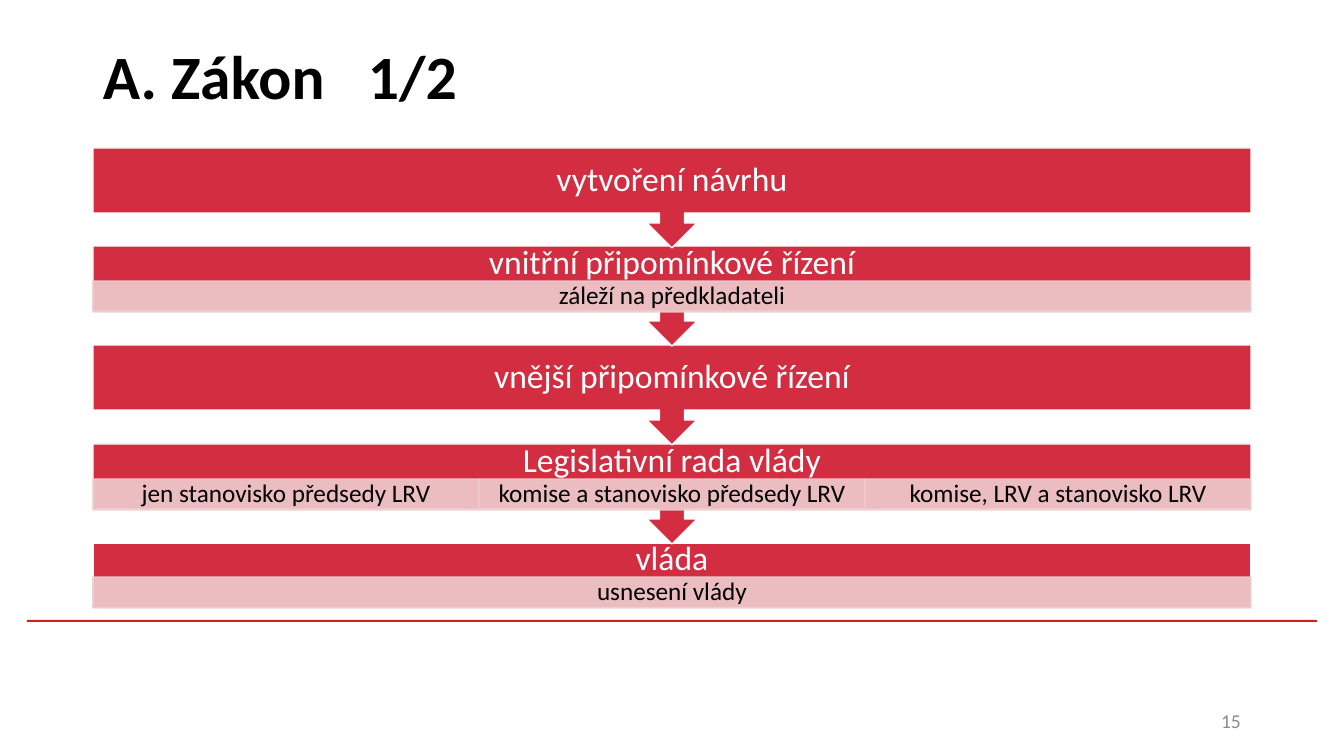
"""Build the slide on the stages of drafting a Czech law."""
from lxml import etree
from pptx import Presentation
from pptx.dml.color import RGBColor
from pptx.enum.shapes import MSO_SHAPE
from pptx.enum.text import MSO_ANCHOR, PP_ALIGN
from pptx.oxml.ns import qn
from pptx.util import Pt

RECTANGLE = MSO_SHAPE.RECTANGLE
ARROW_CALLOUT = MSO_SHAPE.UP_ARROW_CALLOUT
MIDDLE = MSO_ANCHOR.MIDDLE
LEFT, CENTER, RIGHT = PP_ALIGN.LEFT, PP_ALIGN.CENTER, PP_ALIGN.RIGHT

THEME = {
    "font": "Calibri",
    "title_size": 44, "heading_size": 24, "detail_size": 18, "number_size": 14,
    "step": "D22D40", "detail": "EECDCF", "rule": "CD1F21",
    "white": "FFFFFF", "black": "000000", "grey": "8C8C8C",
}
SLIDE_WIDTH, SLIDE_HEIGHT = 1344, 756
SCALE = 12192000 / SLIDE_WIDTH


def px(*lengths):
    return [round(length * SCALE) for length in lengths]


def write(frame, text, size, color, align=CENTER, bold=False, inset=(10, 5), spacing=1.0, tab=None):
    frame.word_wrap = True
    frame.vertical_anchor = MIDDLE
    frame.margin_left, frame.margin_top = px(*inset)
    frame.margin_right, frame.margin_bottom = px(*inset)
    paragraph = frame.paragraphs[0]
    paragraph.alignment = align
    paragraph.line_spacing = spacing
    if tab:
        stops = etree.SubElement(paragraph._p.get_or_add_pPr(), qn("a:tabLst"))
        etree.SubElement(stops, qn("a:tab"), pos=str(px(tab)[0]), algn="l")
    run = paragraph.add_run()
    run.text = text
    run.font.name = THEME["font"]
    run.font.size = Pt(THEME[size])
    run.font.bold = bold
    run.font.color.rgb = RGBColor.from_string(THEME[color])


prs = Presentation()
prs.slide_width, prs.slide_height = px(SLIDE_WIDTH, SLIDE_HEIGHT)
slide = prs.slides.add_slide(prs.slide_layouts[6])
shapes = slide.shapes

rule = shapes.add_shape(RECTANGLE, *px(27, 620, 1290, 2))
rule.shadow.inherit = False
rule.fill.solid()
rule.fill.fore_color.rgb = RGBColor.from_string(THEME["rule"])
rule.line.fill.background()

STEP_LEFT, STEP_WIDTH = 93, 1158
title = shapes.add_textbox(*px(STEP_LEFT, 2, STEP_WIDTH, 146))
write(title.text_frame, "A. Zákon\t1/2", "title_size", "black", align=LEFT, bold=True, tab=265)
page_number = shapes.add_textbox(*px(949, 701, 302, 40))
write(page_number.text_frame, "15", "number_size", "grey", align=RIGHT)

steps = [
    ("vytvoření návrhu", []),
    ("vnitřní připomínkové řízení", ["záleží na předkladateli"]),
    ("vnější připomínkové řízení", []),
    ("Legislativní rada vlády", [
        "jen stanovisko předsedy LRV",
        "komise a stanovisko předsedy LRV",
        "komise, LRV a stanovisko LRV",
    ]),
    ("vláda", ["usnesení vlády"]),
]
FIRST_TOP, LAST_TOP = 148, 543
BODY_HEIGHT, CALLOUT_HEIGHT, DETAIL_HEIGHT = 65, 100, 31
last = len(steps) - 1

for index, (heading, details) in reversed(list(enumerate(steps))):
    top = FIRST_TOP + (LAST_TOP - FIRST_TOP) * index // last
    is_last = index == last
    outline, height = (RECTANGLE, BODY_HEIGHT) if is_last else (ARROW_CALLOUT, CALLOUT_HEIGHT)
    step = shapes.add_shape(outline, *px(STEP_LEFT, top, STEP_WIDTH, height))
    step.rotation = 0 if is_last else 180
    step.shadow.inherit = False
    step.fill.solid()
    step.fill.fore_color.rgb = RGBColor.from_string(THEME["step"])
    step.line.color.rgb = RGBColor.from_string(THEME["white"])
    step.line.width = Pt(1)

    detail_offset = BODY_HEIGHT - DETAIL_HEIGHT if is_last else 35
    heading_height = detail_offset if details else BODY_HEIGHT
    label = shapes.add_textbox(*px(STEP_LEFT, top, STEP_WIDTH, heading_height))
    write(label.text_frame, heading, "heading_size", "white", inset=(19, 19), spacing=0.9)

    for column, text in enumerate(details):
        width = STEP_WIDTH // len(details)
        detail = shapes.add_shape(
            RECTANGLE, *px(STEP_LEFT + column * width, top + detail_offset, width, DETAIL_HEIGHT))
        detail.shadow.inherit = False
        detail.fill.solid()
        detail.fill.fore_color.rgb = RGBColor.from_string(THEME["detail"])
        detail.line.color.rgb = RGBColor.from_string(THEME["detail"])
        detail.line.width = Pt(1)
        for color in detail._element.spPr.iter(qn("a:srgbClr")):
            etree.SubElement(color, qn("a:alpha"), val="90000")
        write(detail.text_frame, text, "detail_size", "black", inset=(14, 3), spacing=0.9)

prs.save("out.pptx")
